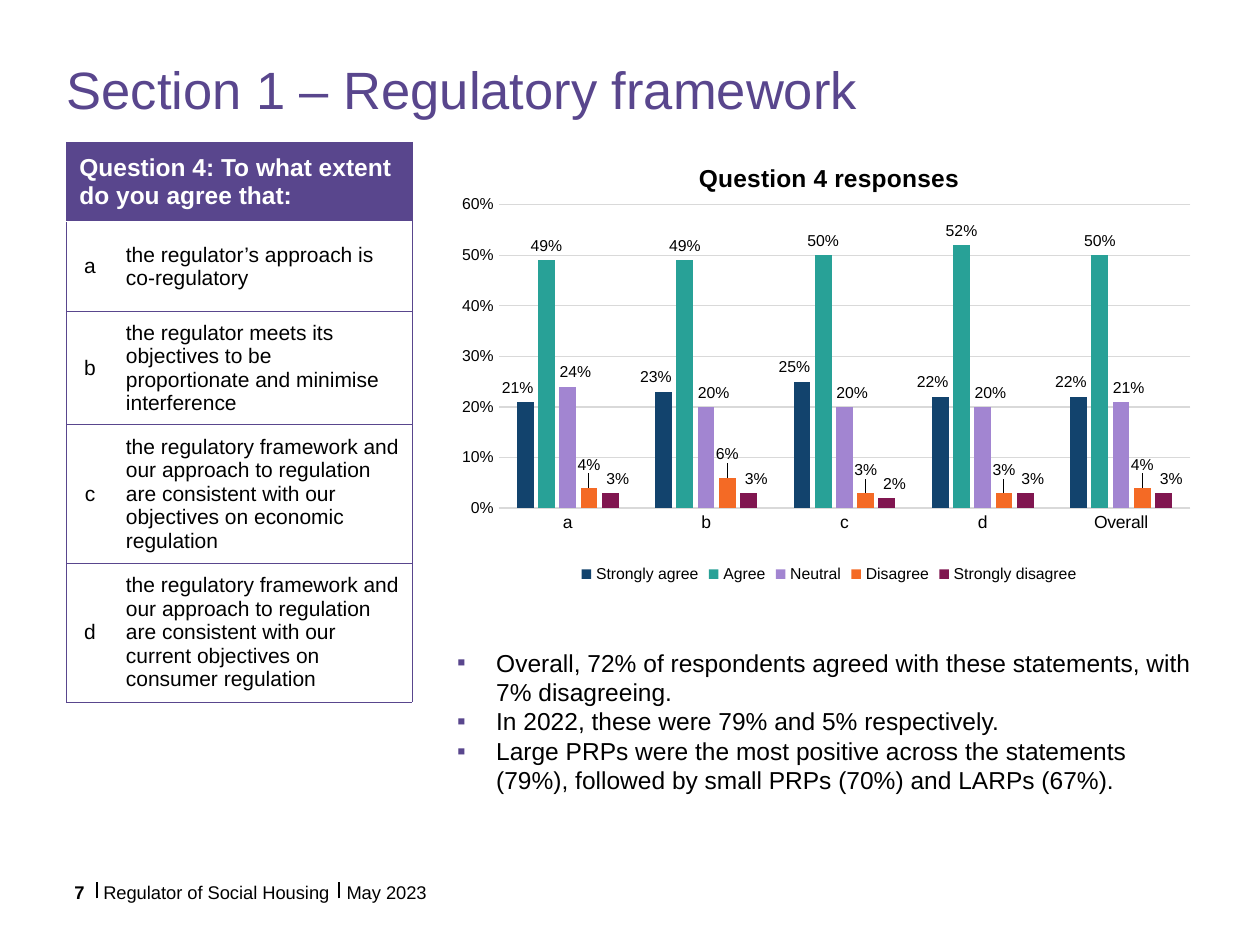
from lxml import etree
from pptx import Presentation
from pptx.chart.data import CategoryChartData
from pptx.dml.color import RGBColor
from pptx.enum.chart import XL_CHART_TYPE, XL_LABEL_POSITION, XL_LEGEND_POSITION, XL_TICK_MARK
from pptx.enum.shapes import MSO_CONNECTOR
from pptx.enum.text import MSO_ANCHOR, PP_ALIGN
from pptx.oxml import parse_xml
from pptx.oxml.ns import nsdecls, qn
from pptx.util import Inches, Pt

CLUSTERED, OUTSIDE = XL_CHART_TYPE.COLUMN_CLUSTERED, XL_LABEL_POSITION.OUTSIDE_END
BOTTOM, NO_TICK = XL_LEGEND_POSITION.BOTTOM, XL_TICK_MARK.NONE
STRAIGHT = MSO_CONNECTOR.STRAIGHT
TOP, MIDDLE = MSO_ANCHOR.TOP, MSO_ANCHOR.MIDDLE
LEFT, CENTER = PP_ALIGN.LEFT, PP_ALIGN.CENTER

COLOURS = {"purple": "59468D", "black": "000000", "white": "FFFFFF", "grid": "D9D9D9"}

# Two columns share a top edge
LEFT_EDGE, RIGHT_COLUMN, CONTENT_TOP = 0.53, 3.53, 1.13
RIGHT_WIDTH, FOOTER_TOP = 6.1, 6.99


def set_font(font, size, colour="black", bold=False):
    font.name, font.size, font.bold = "Arial", Pt(size), bold
    font.color.rgb = RGBColor.from_string(COLOURS[colour])


def chart_layout(settings):
    """Return a manual chart layout; lengths are shares of the chart's size."""
    layout = parse_xml(f'<c:layout {nsdecls("c")}><c:manualLayout/></c:layout>')
    for name, value in settings.items():
        etree.SubElement(layout[0], qn(f"c:{name}")).set("val", str(value))
    return layout


presentation = Presentation()
presentation.slide_width, presentation.slide_height = Inches(10), Inches(7.5)
slide = presentation.slides.add_slide(presentation.slide_layouts[5])

# Title
title = slide.shapes.title
title.left, title.top, title.width, title.height = map(Inches, (LEFT_EDGE, 0.51, 8.87, 0.79))
frame = title.text_frame
frame.margin_left = frame.margin_top = frame.margin_right = frame.margin_bottom = 0
frame.vertical_anchor = TOP
frame.text = "Section 1 – Regulatory framework"
paragraph = frame.paragraphs[0]
paragraph.alignment, paragraph.line_spacing = LEFT, 0.9
set_font(paragraph.font, 30, "purple")

# Footer
for text, left, width, alignment, bold in (
    ("7", LEFT_EDGE, 0.2, CENTER, True),
    ("Regulator of Social Housing", 0.82, 1.83, LEFT, False),
    ("May 2023", 2.75, 2.35, LEFT, False),
):
    box = slide.shapes.add_textbox(*map(Inches, (left, FOOTER_TOP, width, 0.12)))
    frame = box.text_frame
    frame.margin_left = frame.margin_top = frame.margin_right = frame.margin_bottom = 0
    frame.word_wrap = True
    frame.text = text
    frame.paragraphs[0].alignment = alignment
    set_font(frame.paragraphs[0].font, 10.5, bold=bold)
for x in (0.77, 2.69):
    divider = slide.shapes.add_connector(STRAIGHT, *map(Inches, (x, 7.13, x, 7)))
    divider.line.width = Pt(0.75)
    divider.line.color.rgb = RGBColor.from_string(COLOURS["black"])
    etree.SubElement(divider._element.spPr, qn("a:effectLst"))

# Question table
rows = [
    ("Question 4: To what extent do you agree that:", ""),
    ("a", "the regulator’s approach is co-regulatory"),
    ("b", "the regulator meets its objectives to be proportionate and minimise interference"),
    ("c", "the regulatory framework and our approach to regulation are consistent with "
          "our objectives on economic regulation"),
    ("d", "the regulatory framework and our approach to regulation are consistent with "
          "our current objectives on consumer regulation"),
]
row_heights = (0.63, 0.71, 0.84, 1.1, 1.1)
table = slide.shapes.add_table(len(rows), 2, *map(
    Inches, (LEFT_EDGE, CONTENT_TOP, 2.74, sum(row_heights)))).table
table.first_row = table.horz_banding = False
table.columns[0].width, table.columns[1].width = Inches(0.37), Inches(2.37)
for row, height in zip(table.rows, row_heights):
    row.height = Inches(height)
table.cell(0, 0).merge(table.cell(0, 1))
for row_index, texts in enumerate(rows):
    header = row_index == 0
    for column_index, text in enumerate(texts):
        cell = table.cell(row_index, column_index)
        sides = "LRT" if header else ("LTB", "RTB")[column_index]
        for side in sides:
            cell._tc.get_or_add_tcPr().append(parse_xml(
                f'<a:ln{side} {nsdecls("a")} w="{Pt(0.5)}"><a:solidFill>'
                f'<a:srgbClr val="{COLOURS["purple"]}"/></a:solidFill></a:ln{side}>'))
        cell.fill.solid()
        cell.fill.fore_color.rgb = RGBColor.from_string(COLOURS["purple" if header else "white"])
        cell.vertical_anchor = MIDDLE
        if not text:
            continue
        cell.text = text
        paragraph = cell.text_frame.paragraphs[0]
        if header:
            set_font(paragraph.font, 14, "white", True)
        else:
            paragraph.alignment = LEFT if column_index else CENTER
            paragraph.space_before = paragraph.space_after = Pt(2)
            set_font(paragraph.font, 12)

# Findings
box = slide.shapes.add_textbox(*map(Inches, (RIGHT_COLUMN, 5.09, RIGHT_WIDTH, 1.28)))
frame = box.text_frame
frame.word_wrap = True
frame.text = "\n".join((
    "Overall, 72% of respondents agreed with these statements, with 7% disagreeing.",
    "In 2022, these were 79% and 5% respectively.",
    "Large PRPs were the most positive across the statements (79%), "
    "followed by small PRPs (70%) and LARPs (67%).",
))
for paragraph in frame.paragraphs:
    set_font(paragraph.font, 14)
    properties = paragraph._p.get_or_add_pPr()
    properties.set("marL", str(Inches(0.31)))
    properties.set("indent", str(-Inches(0.31)))
    bullet = (
        f'<a:buClr {nsdecls("a")}><a:srgbClr val="{COLOURS["purple"]}"/></a:buClr>',
        f'<a:buFont {nsdecls("a")} typeface="Arial"/>',
        f'<a:buChar {nsdecls("a")} char="▪"/>',
    )
    for offset, xml in enumerate(bullet):
        properties.insert(offset, parse_xml(xml))

# Response chart: colour, label shift that keeps neighbours apart, values
responses = {
    "Strongly agree": ("12436D", (-0.01, 0), (0.21, 0.23, 0.25, 0.22, 0.22)),
    "Agree": ("28A197", (0, 0), (0.49, 0.49, 0.5, 0.52, 0.5)),
    "Neutral": ("A285D1", (0.01, 0), (0.24, 0.2, 0.2, 0.2, 0.21)),
    "Disagree": ("F46A25", (0, -0.02), (0.04, 0.06, 0.03, 0.03, 0.04)),
    "Strongly disagree": ("801650", (0.01, 0), (0.03, 0.03, 0.02, 0.03, 0.03)),
}
chart_data = CategoryChartData(number_format="0%")
chart_data.categories = ["a", "b", "c", "d", "Overall"]
for name, (_, _, values) in responses.items():
    chart_data.add_series(name, values)
chart = slide.shapes.add_chart(CLUSTERED, *map(
    Inches, (RIGHT_COLUMN, CONTENT_TOP, RIGHT_WIDTH, 3.54)), chart_data).chart
set_font(chart.font, 10)
chart.has_title = True
chart.chart_title.text_frame.text = "Question 4 responses"
set_font(chart.chart_title.text_frame.paragraphs[0].font, 14, bold=True)
from_edge = {"xMode": "edge", "yMode": "edge"}
chart.chart_title._element.find(qn("c:tx")).addnext(
    chart_layout({**from_edge, "x": 0.33, "y": 0.05}))
plot_area = chart._chartSpace.chart.plotArea
for layout in plot_area.findall(qn("c:layout")):
    plot_area.remove(layout)
plot_area.insert(0, chart_layout(
    {"layoutTarget": "inner", **from_edge, "x": 0.07, "y": 0.14, "w": 0.9, "h": 0.68}))

chart.has_legend = True
chart.legend.position, chart.legend.include_in_layout = BOTTOM, False
set_font(chart.legend.font, 9)

for axis, size in ((chart.category_axis, 10), (chart.value_axis, 9)):
    axis.major_tick_mark = axis.minor_tick_mark = NO_TICK
    set_font(axis.tick_labels.font, size)
value_axis = chart.value_axis
value_axis.minimum_scale, value_axis.maximum_scale, value_axis.major_unit = 0, 0.6, 0.1
value_axis.format.line.fill.background()
for line in (chart.category_axis.format.line, value_axis.major_gridlines.format.line):
    line.width = Pt(0.75)
    line.color.rgb = RGBColor.from_string(COLOURS["grid"])

plot = chart.plots[0]
plot.gap_width, plot.overlap, plot.vary_by_categories = 219, -27, False
for series in plot.series:
    colour, (shift_x, shift_y), values = responses[series.name]
    series.format.fill.solid()
    series.format.fill.fore_color.rgb = RGBColor.from_string(colour)
    labels = series.data_labels
    labels.show_value, labels.position = True, OUTSIDE
    labels.number_format, labels.number_format_is_linked = "0%", False
    set_font(labels.font, 9)
    for index in range(len(values)) if shift_x or shift_y else ():
        label = series.points[index].data_label
        label.position = OUTSIDE
        set_font(label.font, 9)
        label_xml = labels._element.findall(qn("c:dLbl"))[index]
        label_xml.find(qn("c:idx")).addnext(chart_layout({"x": shift_x, "y": shift_y}))

presentation.save("out.pptx")
